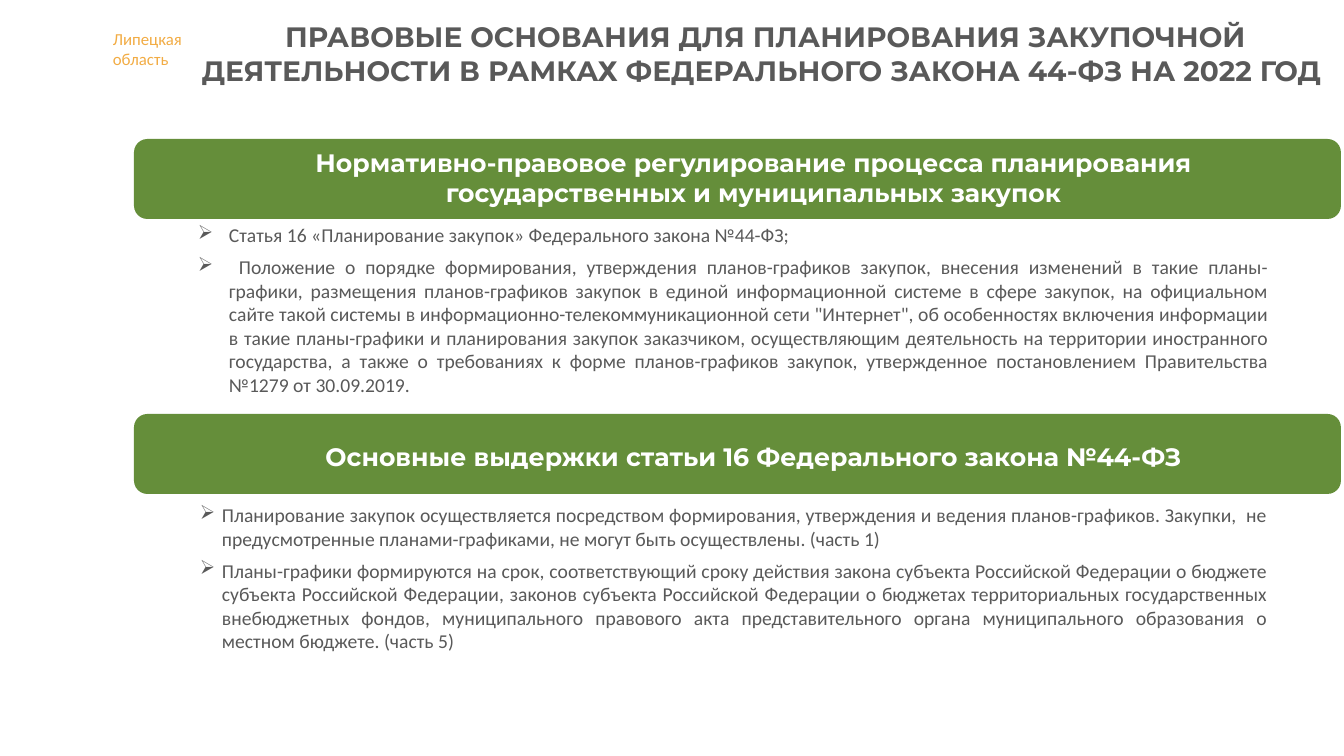
from lxml.etree import SubElement
from pptx import Presentation
from pptx.dml.color import RGBColor
from pptx.enum.shapes import MSO_SHAPE
from pptx.enum.text import MSO_ANCHOR, PP_ALIGN
from pptx.oxml.ns import qn
from pptx.util import Emu, Pt

SCALE = 914400 / 100.8
HUES = {"green": "658E3A", "grey": "595959", "gold": "F2AC44", "white": "FFFFFF"}
FORMS = {
    "label": {"name": "Calibri", "size": Pt(12), "bold": False, "hue": "gold"},
    "title": {"name": "Montserrat", "size": Pt(20), "bold": True, "hue": "grey"},
    "head": {"name": "Montserrat", "size": Pt(18), "bold": True, "hue": "white"},
    "item": {"name": "Calibri", "size": Pt(14), "bold": False, "hue": "grey"},
}


def px(n):
    return Emu(round(n * SCALE))


def color(hue):
    return RGBColor.from_string(HUES[hue])


class Board:
    def __init__(self, deck):
        self.slide = deck.slides.add_slide(deck.slide_layouts[6])
        self.shapes = self.slide.shapes

    def style(self, par, form):
        for key, value in FORMS[form].items():
            if key == "hue":
                par.font.color.rgb = color(value)
            else:
                setattr(par.font, key, value)

    def band(self, *area):
        bar = self.shapes.add_shape(MSO_SHAPE.ROUNDED_RECTANGLE, *map(px, area))
        bar.shadow.inherit = False
        bar.fill.solid()
        bar.fill.fore_color.rgb = color("green")
        bar.line.fill.background()

    def text(self, area, lines, form, align=PP_ALIGN.CENTER, hang=None):
        frame = self.shapes.add_textbox(*map(px, area)).text_frame
        frame.word_wrap = True
        frame.vertical_anchor = MSO_ANCHOR.TOP
        for i, line in enumerate(lines):
            par = frame.add_paragraph() if i else frame.paragraphs[0]
            par.text = line
            par.alignment = align
            if hang:
                self.bullet(par, *hang)
                if i:
                    par.space_before = Pt(6)
            self.style(par, form)

    def bullet(self, par, left, first):
        props = par._p.get_or_add_pPr()
        props.set("marL", str(px(left)))
        props.set("indent", str(px(first)))
        SubElement(props, qn("a:buChar")).set("char", "➢")

    def list(self, area, lines, hang):
        self.text(area, lines, "item", PP_ALIGN.JUSTIFY, hang)


def main():
    deck = Presentation()
    deck.slide_width, deck.slide_height = px(1344), px(756)
    board = Board(deck)

    # Region label and title
    board.text((103, 24, 92, 50), ["Липецкая", "область"], "label", PP_ALIGN.LEFT)
    board.text((190, 15, 1151, 78), [
        "ПРАВОВЫЕ ОСНОВАНИЯ ДЛЯ ПЛАНИРОВАНИЯ ЗАКУПОЧНОЙ ДЕЯТЕЛЬНОСТИ "
        "В РАМКАХ ФЕДЕРАЛЬНОГО ЗАКОНА 44-ФЗ НА 2022 ГОД "], "title")

    # Green bands with their headings
    heads = [
        (139, 142, 72, "Нормативно-правовое регулирование процесса планирования "
                       "государственных и муниципальных закупок"),
        (414, 436, 40, "Основные выдержки статьи 16 Федерального закона №44-ФЗ"),
    ]
    for top, start, tall, words in heads:
        board.band(134, top, 1207, 80)
        board.text((256, start, 995, tall), [words], "head")

    # Regulations
    board.list((180, 218, 1099, 184), [
        "Статья 16 «Планирование закупок» Федерального закона №44-ФЗ;",
        " Положение о порядке формирования, утверждения планов-графиков закупок, "
        "внесения изменений в такие планы-графики, размещения планов-графиков закупок "
        "в единой информационной системе в сфере закупок, на официальном сайте такой "
        "системы в информационно-телекоммуникационной сети \"Интернет\", об особенностях "
        "включения информации в такие планы-графики и планирования закупок заказчиком, "
        "осуществляющим деятельность на территории иностранного государства, а также "
        "о требованиях к форме планов-графиков закупок, утвержденное постановлением "
        "Правительства №1279 от 30.09.2019.",
    ], (39, -31))

    # Excerpts from article 16
    board.list((188, 498, 1090, 161), [
        "Планирование закупок осуществляется посредством формирования, утверждения "
        "и ведения планов-графиков. Закупки,  не предусмотренные планами-графиками, "
        "не могут быть осуществлены. (часть 1)",
        "Планы-графики формируются на срок, соответствующий сроку действия закона "
        "субъекта Российской Федерации о бюджете субъекта Российской Федерации, законов "
        "субъекта Российской Федерации о бюджетах территориальных государственных "
        "внебюджетных фондов, муниципального правового акта представительного органа "
        "муниципального образования о местном бюджете. (часть 5)",
    ], (24, -22))

    deck.save("out.pptx")


if __name__ == "__main__":
    main()
